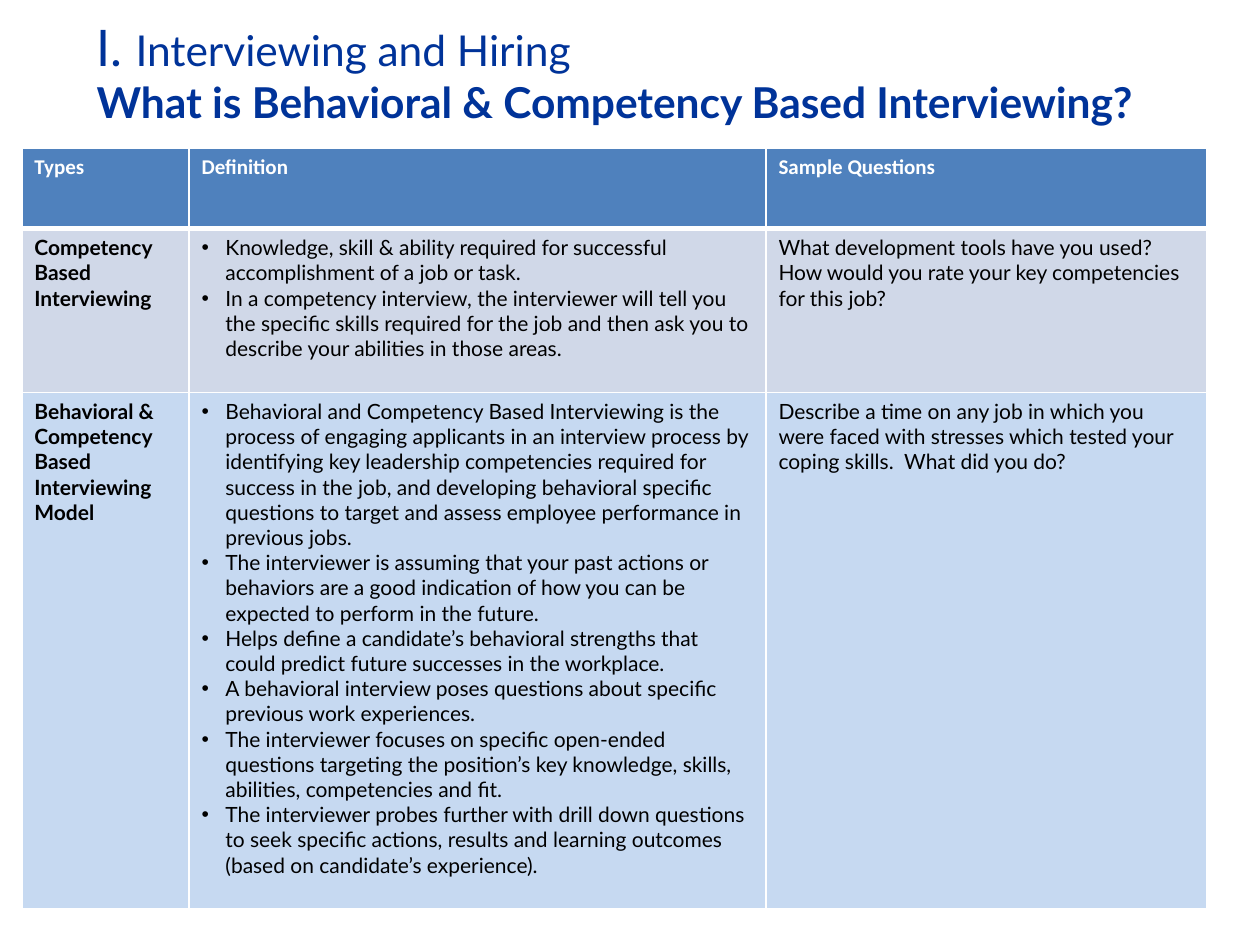
import pptx
import pptx.dml.color
import pptx.enum.text
import pptx.oxml
import pptx.oxml.ns
import pptx.util
from pptx.util import Cm, Pt

NAVY = pptx.dml.color.RGBColor(0x00, 0x33, 0x99)
BLUE = pptx.dml.color.RGBColor(0x4F, 0x81, 0xBD)
GREY_BLUE = pptx.dml.color.RGBColor(0xD0, 0xD8, 0xE8)
LIGHT_BLUE = pptx.dml.color.RGBColor(0xC6, 0xD9, 0xF1)
WHITE = pptx.dml.color.RGBColor(0xFF, 0xFF, 0xFF)
BLACK = pptx.dml.color.RGBColor(0x00, 0x00, 0x00)

COLUMN_WIDTHS = [Cm(3.37), Cm(11.63), Cm(8.89)]
ROW_HEIGHTS = [Cm(1.63), Cm(3.3), Cm(10.41)]
ROW_FILLS = [BLUE, GREY_BLUE, LIGHT_BLUE]
BULLET_INDENT = Cm(0.48)
DEFINITION_COLUMN = 1

ROWS = [
    [["Types"], ["Definition"], ["Sample Questions"]],
    [
        ["Competency Based Interviewing"],
        [
            "Knowledge, skill & ability required for successful accomplishment of a job or task.",
            "In a competency interview, the interviewer will tell you the specific skills required "
            "for the job and then ask you to describe your abilities in those areas.",
        ],
        [
            "What development tools have you used?",
            "How would you rate your key competencies for this job?",
        ],
    ],
    [
        ["Behavioral & Competency Based Interviewing Model"],
        [
            "Behavioral and Competency Based Interviewing is the process of engaging applicants in "
            "an interview process by identifying key leadership competencies required for success "
            "in the job, and developing behavioral specific questions to target and assess employee "
            "performance in previous jobs.",
            "The interviewer is assuming that your past actions or behaviors are a good indication "
            "of how you can be expected to perform in the future.",
            "Helps define a candidate’s behavioral strengths that could predict future successes "
            "in the workplace.",
            "A behavioral interview poses questions about specific previous work experiences.",
            "The interviewer focuses on specific open-ended questions targeting the position’s key "
            "knowledge, skills, abilities, competencies and fit.",
            "The interviewer probes further with drill down questions to seek specific actions, "
            "results and learning outcomes (based on candidate’s experience).",
        ],
        [
            "Describe a time on any job in which you were faced with stresses which tested your "
            "coping skills.  What did you do?",
        ],
    ],
]


def format_font(font, name, size, color, bold):
    font.name = name
    font.size = Pt(size)
    font.color.rgb = color
    font.bold = bold


def add_title_run(paragraph, text, size, bold=False):
    run = paragraph.add_run()
    run.text = text
    format_font(run.font, "Lato", size, NAVY, bold)


def add_title(slide):
    title = slide.shapes.add_textbox(Cm(1.7), Cm(0.46), Cm(22.86), Cm(1.96))
    title.text_frame.word_wrap = True
    title.text_frame.vertical_anchor = pptx.enum.text.MSO_ANCHOR.MIDDLE
    paragraph = title.text_frame.paragraphs[0]
    add_title_run(paragraph, "I. ", 28.8)
    add_title_run(paragraph, "Interviewing and Hiring", 24.3)
    paragraph.add_line_break()
    add_title_run(paragraph, "What is Behavioral & Competency Based Interviewing?", 24.3, True)


def add_bullet(paragraph):
    properties = paragraph._p.get_or_add_pPr()
    properties.set("marL", str(BULLET_INDENT))
    properties.set("indent", str(-BULLET_INDENT))
    namespace = pptx.oxml.ns.nsdecls("a")
    properties.append(pptx.oxml.parse_xml(f'<a:buFont {namespace} typeface="Arial"/>'))
    properties.append(pptx.oxml.parse_xml(f'<a:buChar {namespace} char="•"/>'))


def set_borders(cell, row_index):
    widths = {
        "lnL": 1,
        "lnR": 1,
        "lnT": 3 if row_index == 1 else 1,
        "lnB": 3 if row_index == 0 else 1,
    }
    properties = cell._tc.get_or_add_tcPr()
    for position, (tag, width) in enumerate(widths.items()):
        border = pptx.oxml.parse_xml(
            f'<a:{tag} {pptx.oxml.ns.nsdecls("a")} w="{Pt(width)}">'
            f'<a:solidFill><a:srgbClr val="{WHITE}"/></a:solidFill></a:{tag}>'
        )
        properties.insert(position, border)


def fill_cell(cell, texts, row_index, column_index):
    is_header = row_index == 0
    cell.fill.solid()
    cell.fill.fore_color.rgb = ROW_FILLS[row_index]
    set_borders(cell, row_index)
    cell.text_frame.text = "\n".join(texts)
    for paragraph in cell.text_frame.paragraphs:
        if column_index == DEFINITION_COLUMN and not is_header:
            add_bullet(paragraph)
        for run in paragraph.runs:
            format_font(
                run.font,
                "Calibri" if is_header else "Lato",
                12,
                WHITE if is_header else BLACK,
                is_header or column_index == 0,
            )


def add_interview_table(slide):
    frame = slide.shapes.add_table(
        len(ROWS), len(COLUMN_WIDTHS), Cm(0.44), Cm(2.98), sum(COLUMN_WIDTHS), sum(ROW_HEIGHTS)
    )
    table = frame.table
    table.horz_banding = False
    for column, width in zip(table.columns, COLUMN_WIDTHS):
        column.width = width
    for row, height in zip(table.rows, ROW_HEIGHTS):
        row.height = height
    for row_index, row_texts in enumerate(ROWS):
        for column_index, texts in enumerate(row_texts):
            fill_cell(table.cell(row_index, column_index), texts, row_index, column_index)


def main():
    presentation = pptx.Presentation()
    presentation.slide_width = Cm(25.4)
    presentation.slide_height = Cm(19.05)
    slide = presentation.slides.add_slide(presentation.slide_layouts[6])
    add_title(slide)
    add_interview_table(slide)
    presentation.save("out.pptx")


if __name__ == "__main__":
    main()
